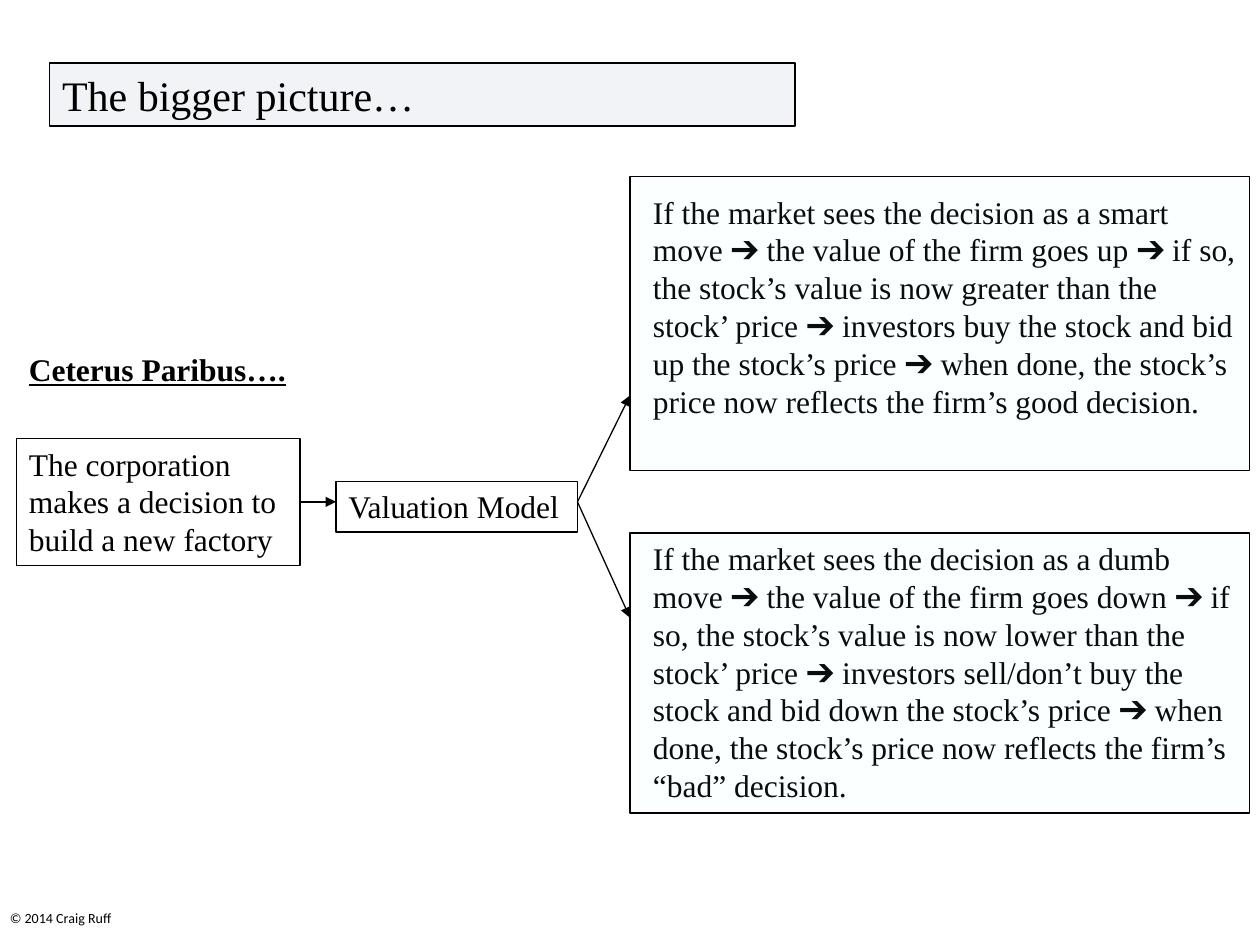
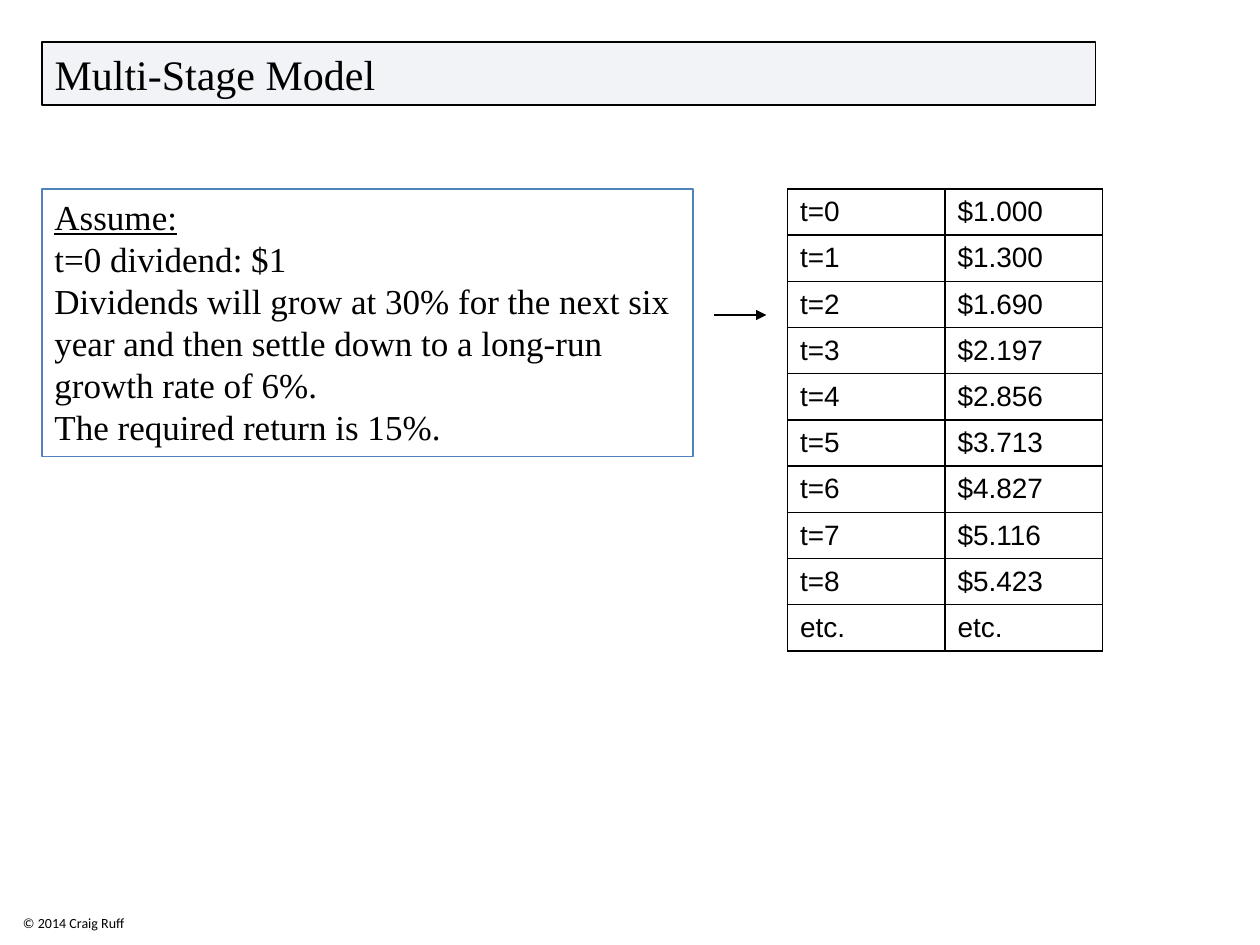
"""Build two finance slides: a decision flow and a multi-stage dividend model."""
from lxml import etree
from pptx import Presentation
from pptx.dml.color import RGBColor
from pptx.enum.shapes import MSO_CONNECTOR, MSO_SHAPE
from pptx.enum.text import MSO_ANCHOR, MSO_AUTO_SIZE, PP_ALIGN
from pptx.oxml.ns import qn
from pptx.util import Pt

RECTANGLE = MSO_SHAPE.RECTANGLE
STRAIGHT = MSO_CONNECTOR.STRAIGHT
TOP, MIDDLE = MSO_ANCHOR.TOP, MSO_ANCHOR.MIDDLE
LEFT = PP_ALIGN.LEFT
FIXED = MSO_AUTO_SIZE.NONE

BLACK, BLUE, NAVY, CYAN = "000000", "4F81BD", "002060", "CCFFFF"
TITLE = {"name": "Times New Roman", "size": Pt(24)}
BODY = {"name": "Times New Roman", "size": Pt(18)}
HEADING = {**BODY, "bold": True, "underline": True}
ASSUMPTION = {**BODY, "size": Pt(20)}
CELL = {"name": "Arial", "size": Pt(16)}
FOOTER = {"name": "Calibri", "size": Pt(8)}
TITLE_ONLY_LAYOUT = 5

SMART_MOVE = (
    "If the market sees the decision as a smart move ➔ the value of the firm goes up ➔ "
    "if so, the stock’s value is now greater than the stock’ price ➔ investors buy the "
    "stock and bid up the stock’s price ➔ when done, the stock’s price now reflects the "
    "firm’s good decision."
)
DUMB_MOVE = (
    "If the market sees the decision as a dumb move ➔ the value of the firm goes down ➔ "
    "if so, the stock’s value is now lower than the stock’ price ➔ investors sell/don’t "
    "buy the stock and bid down the stock’s price ➔ when done, the stock’s price now "
    "reflects the firm’s “bad” decision."
)
ASSUMPTIONS = (
    "Assume:",
    "t=0 dividend: $1",
    "Dividends will grow at 30% for the next six year and then settle down to a "
    "long-run growth rate of 6%.",
    "The required return is 15%.",
)


def color(value):
    """Turn a hex string into a colour."""
    return RGBColor.from_string(value)


def points(*lengths):
    """Turn numbers into lengths in points."""
    return [Pt(length) for length in lengths]


def write(frame, lines, style, anchor=TOP):
    """Fill a text frame with left-aligned paragraphs in one style."""
    frame.word_wrap = True
    frame.auto_size = FIXED
    frame.vertical_anchor = anchor
    for index, line in enumerate(lines):
        para = frame.add_paragraph() if index else frame.paragraphs[0]
        para.alignment = LEFT
        span = para.add_run()
        span.text = line
        span.font.color.rgb = color(BLACK)
        for name, value in style.items():
            setattr(span.font, name, value)


def outline(shape, line_color=BLACK):
    """Give a shape or connector a thin solid line."""
    shape.line.color.rgb = color(line_color)
    shape.line.width = Pt(0.75)


def tint(shape, fill_color):
    """Fill a shape with a five percent tint of a colour."""
    shape.fill.solid()
    shape.fill.fore_color.rgb = color(fill_color)
    swatch = shape.fill._xPr.find(qn("a:solidFill"))[0]
    etree.SubElement(swatch, qn("a:alpha"), val="5000")


def add_title(page, text, left, top, width):
    """Place the tinted title band."""
    title = page.shapes.title
    title.left, title.top, title.width, title.height = points(left, top, width, 36)
    tint(title, NAVY)
    outline(title)
    write(title.text_frame, [text], TITLE, MIDDLE)


def add_text(page, text, area, style):
    """Place a plain text box."""
    box = page.shapes.add_textbox(*points(*area))
    write(box.text_frame, [text], style)


def add_footer(page, left, top):
    """Place the copyright line."""
    add_text(page, "© 2014 Craig Ruff", (left, top, 96, 17), FOOTER)


def add_box(page, area, line_color=BLACK):
    """Place an outlined, unfilled rectangle."""
    box = page.shapes.add_shape(RECTANGLE, *points(*area))
    box.shadow.inherit = False
    box.fill.background()
    outline(box, line_color)
    return box


def add_outcome(page, text, text_area, frame_area):
    """Place an outcome text under its tinted frame."""
    add_text(page, text, text_area, BODY)
    tint(add_box(page, frame_area), CYAN)


def add_arrow(page, start, end):
    """Draw a straight arrow between two points."""
    arrow = page.shapes.add_connector(STRAIGHT, *points(*start, *end))
    outline(arrow)
    properties = arrow._element.spPr
    etree.SubElement(properties.find(qn("a:ln")), qn("a:tailEnd"), type="triangle")
    etree.SubElement(properties, qn("a:effectLst"))


def add_borders(cell):
    """Draw a black line on every side of a cell."""
    properties = cell._tc.get_or_add_tcPr()
    for side in ("lnL", "lnR", "lnT", "lnB"):
        line = etree.SubElement(properties, qn(f"a:{side}"), w=str(Pt(1)))
        fill = etree.SubElement(line, qn("a:solidFill"))
        etree.SubElement(fill, qn("a:srgbClr"), val=BLACK)


def add_table(page, rows, left, top, column_width, row_height):
    """Place a plain bordered table."""
    columns = len(rows[0])
    size = (column_width * columns, row_height * len(rows))
    table = page.shapes.add_table(len(rows), columns, *points(left, top, *size)).table
    table.first_row = table.horz_banding = False
    for row_index, row in enumerate(rows):
        for column_index, text in enumerate(row):
            cell = table.cell(row_index, column_index)
            add_borders(cell)
            cell.fill.background()
            cell.vertical_anchor = MIDDLE
            write(cell.text_frame, [text], CELL, MIDDLE)


def dividend_rows():
    """List dividends growing 30% for six years and 6% afterwards."""
    rows = []
    for year in range(9):
        dividend = 1.3 ** min(year, 6) * 1.06 ** max(year - 6, 0)
        rows.append((f"t={year}", f"${dividend:.3f}"))
    return rows + [("etc.", "etc.")]


def build_bigger_picture(page):
    """Lay out the decision flow."""
    add_title(page, "The bigger picture…", 28.3, 36, 426)
    decision = add_box(page, (9.4, 250.5, 162, 72.7))
    write(decision.text_frame, ["The corporation makes a decision to build a new factory"], BODY)
    model = add_box(page, (192, 275, 138, 29))
    write(model.text_frame, ["Valuation Model"], BODY)
    add_text(page, "Ceterus Paribus….", (9.4, 196.5, 198, 29), HEADING)
    add_outcome(page, SMART_MOVE, (366, 106.5, 348, 158.4), (360, 101, 354, 168))
    add_outcome(page, DUMB_MOVE, (366, 304.6, 348, 160), (360, 304.6, 354, 160))
    middle = 286.8
    add_arrow(page, (171.4, middle), (192, middle))
    for outcome_height in (226, 353):
        add_arrow(page, (330, middle), (360, outcome_height))
    add_footer(page, -1.5, 516.3)


def build_multi_stage(page):
    """Lay out the dividend assumptions and table."""
    add_title(page, "Multi-Stage Model", 24, 24, 602)
    box = add_box(page, (24, 108, 372, 152.7), BLUE)
    write(box.text_frame, ASSUMPTIONS, ASSUMPTION)
    box.text_frame.paragraphs[0].runs[0].font.underline = True
    add_arrow(page, (408, 180), (438, 180))
    add_table(page, dividend_rows(), 450, 108, 90, 26.4)
    add_footer(page, 6, 519)


def main():
    """Build and save the deck."""
    deck = Presentation()
    deck.slide_width, deck.slide_height = points(720, 540)
    for build in (build_bigger_picture, build_multi_stage):
        build(deck.slides.add_slide(deck.slide_layouts[TITLE_ONLY_LAYOUT]))
    deck.save("out.pptx")


if __name__ == "__main__":
    main()
